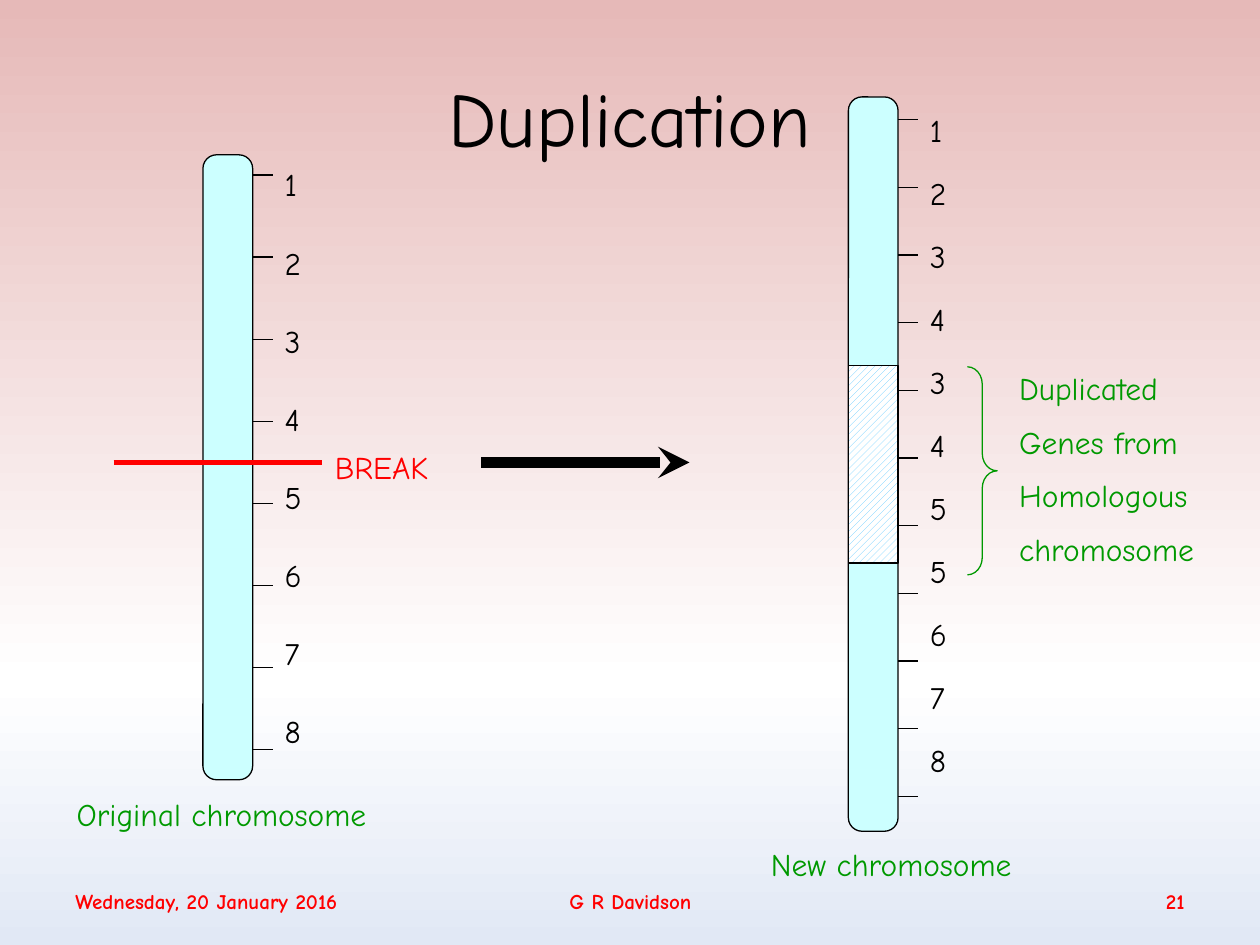
from copy import deepcopy

from pptx import Presentation
from pptx.dml.color import RGBColor
from pptx.enum.dml import MSO_PATTERN
from pptx.enum.shapes import MSO_CONNECTOR, MSO_SHAPE
from pptx.enum.text import MSO_ANCHOR as Anchor, PP_ALIGN as Align
from pptx.oxml.ns import qn
from pptx.util import Pt
from lxml.etree import SubElement

FONT = "Comic Neue"
COLORS = {
    "black": "000000", "red": "FF0000", "green": "009900", "white": "FFFFFF",
    "body": "CCFFFF", "hatch": "66CCFF", "sky": "E1E8F5", "rose": "E6B9B8",
}
BACKGROUND = [(0, "rose"), (0.72, "white"), (1, "sky")]

TITLE = "Duplication"
FOOTERS = [  # text, left, width, alignment
    ("Wednesday, 20 January 2016", 36, 239, Align.LEFT),
    ("G R Davidson", 246.2, 228.2, Align.CENTER),
    ("21", 516.2, 167.8, Align.RIGHT),
]
CHROMOSOMES = [
    dict(genes="12345678", body=(116, 88.5, 28.4, 357.1),
         first_tick=100, tick_gap=46.93, genes_box=(155.5, 77, 51, 368.6), spacing=1.65),
    dict(genes="12343455678", body=(484.8, 55.4, 28.4, 419.6),
         first_tick=68.5, tick_gap=38.65, genes_box=(524.2, 54.7, 51, 413.3), spacing=1.25),
]
TICK_LENGTH = 11.4
LABELS = [  # lines, colour, box
    (["BREAK"], "red", (184.3, 252.7, 85, 28.8)),
    (["Original chromosome"], "green", (36.7, 450.7, 215.3, 28.8)),
    (["New chromosome"], "green", (433.4, 479.5, 164.2, 28.8)),
    (["Duplicated", "Genes from", "Homologous", "chromosome"], "green",
     (575.3, 207.4, 118.8, 126.7)),
]
BREAK_Y = 264.3
DUPLICATED_TOP, DUPLICATED_HEIGHT = 208.8, 113
BRACE = (552.8, 209.6, 17, 118.9)


def rgb(name):
    return RGBColor.from_string(COLORS[name])


def add_run(paragraph, text, size, color, bold=False):
    run = paragraph.add_run()
    run.text = text
    run.font.name, run.font.size, run.font.bold = FONT, Pt(size), bold
    run.font.color.rgb = rgb(color)


def add_lines(slide, lines, color, box, spacing=1.0):
    frame = slide.shapes.add_textbox(*map(Pt, box)).text_frame
    frame.word_wrap = True
    for i, line in enumerate(lines):
        paragraph = frame.add_paragraph() if i else frame.paragraphs[0]
        paragraph.line_spacing = spacing
        paragraph.space_before = Pt(9)
        add_run(paragraph, line, 18, color)


def add_outline(slide, kind, box, line="black"):
    shape = slide.shapes.add_shape(kind, *map(Pt, box))
    shape.shadow.inherit = False
    shape.line.color.rgb, shape.line.width = rgb(line), Pt(0.75)
    return shape


def add_horizontal(slide, left, right, y, color="black", width=0.75):
    line = slide.shapes.add_connector(
        MSO_CONNECTOR.STRAIGHT, Pt(left), Pt(y), Pt(right), Pt(y))
    line.line.color.rgb, line.line.width = rgb(color), Pt(width)
    SubElement(line.element.spPr, qn("a:effectLst"))
    return line


def paint_background(slide):
    fill = slide.background.fill
    fill.gradient()
    fill.gradient_angle = 270
    stop_list = slide.element.xpath(".//a:gsLst")[0]
    stop_list.append(deepcopy(stop_list[-1]))
    for stop, (position, color) in zip(fill.gradient_stops, BACKGROUND):
        stop.position, stop.color.rgb = position, rgb(color)


def add_chromosome(slide, genes, body, first_tick, tick_gap, genes_box, spacing):
    shape = add_outline(slide, MSO_SHAPE.ROUNDED_RECTANGLE, body)
    shape.adjustments[0] = 0.274
    shape.fill.solid()
    shape.fill.fore_color.rgb = rgb("body")
    edge = body[0] + body[2]
    for i in range(len(genes)):
        add_horizontal(slide, edge, edge + TICK_LENGTH, first_tick + i * tick_gap)
    add_lines(slide, genes, "black", genes_box, spacing)


def add_duplicated_section(slide):
    left, _, width, _ = CHROMOSOMES[1]["body"]
    section = add_outline(slide, MSO_SHAPE.RECTANGLE,
                          (left, DUPLICATED_TOP, width, DUPLICATED_HEIGHT))
    section.fill.patterned()
    section.fill.pattern = MSO_PATTERN.WIDE_UPWARD_DIAGONAL
    section.fill.fore_color.rgb = rgb("hatch")
    section.fill.back_color.rgb = rgb("white")
    brace = add_outline(slide, MSO_SHAPE.RIGHT_BRACE, BRACE, "green")
    brace.fill.background()
    brace.adjustments[0] = 0.584


def main():
    prs = Presentation()
    prs.slide_width, prs.slide_height = Pt(720), Pt(540)
    slide = prs.slides.add_slide(prs.slide_layouts[5])
    paint_background(slide)

    title = slide.shapes.title
    title.left, title.top, title.width, title.height = map(Pt, (36, 21.6, 648, 90))
    title.text_frame.vertical_anchor = Anchor.MIDDLE
    heading = title.text_frame.paragraphs[0]
    heading.alignment = Align.CENTER
    add_run(heading, TITLE, 44, "black")

    for text, left, width, alignment in FOOTERS:
        frame = slide.shapes.add_textbox(Pt(left), Pt(500.5), Pt(width), Pt(28.8)).text_frame
        frame.word_wrap = True
        frame.vertical_anchor = Anchor.MIDDLE
        frame.paragraphs[0].alignment = alignment
        add_run(frame.paragraphs[0], text, 12, "red", bold=True)

    for chromosome in CHROMOSOMES:
        add_chromosome(slide, **chromosome)
    add_duplicated_section(slide)

    add_horizontal(slide, 65, 184.3, BREAK_Y, "red", 3)
    arrow = add_horizontal(slide, 275, 394, BREAK_Y, width=6)
    SubElement(arrow.line._get_or_add_ln(), qn("a:tailEnd"), type="stealth")

    for lines, color, box in LABELS:
        add_lines(slide, lines, color, box)
    prs.save("out.pptx")


if __name__ == "__main__":
    main()
